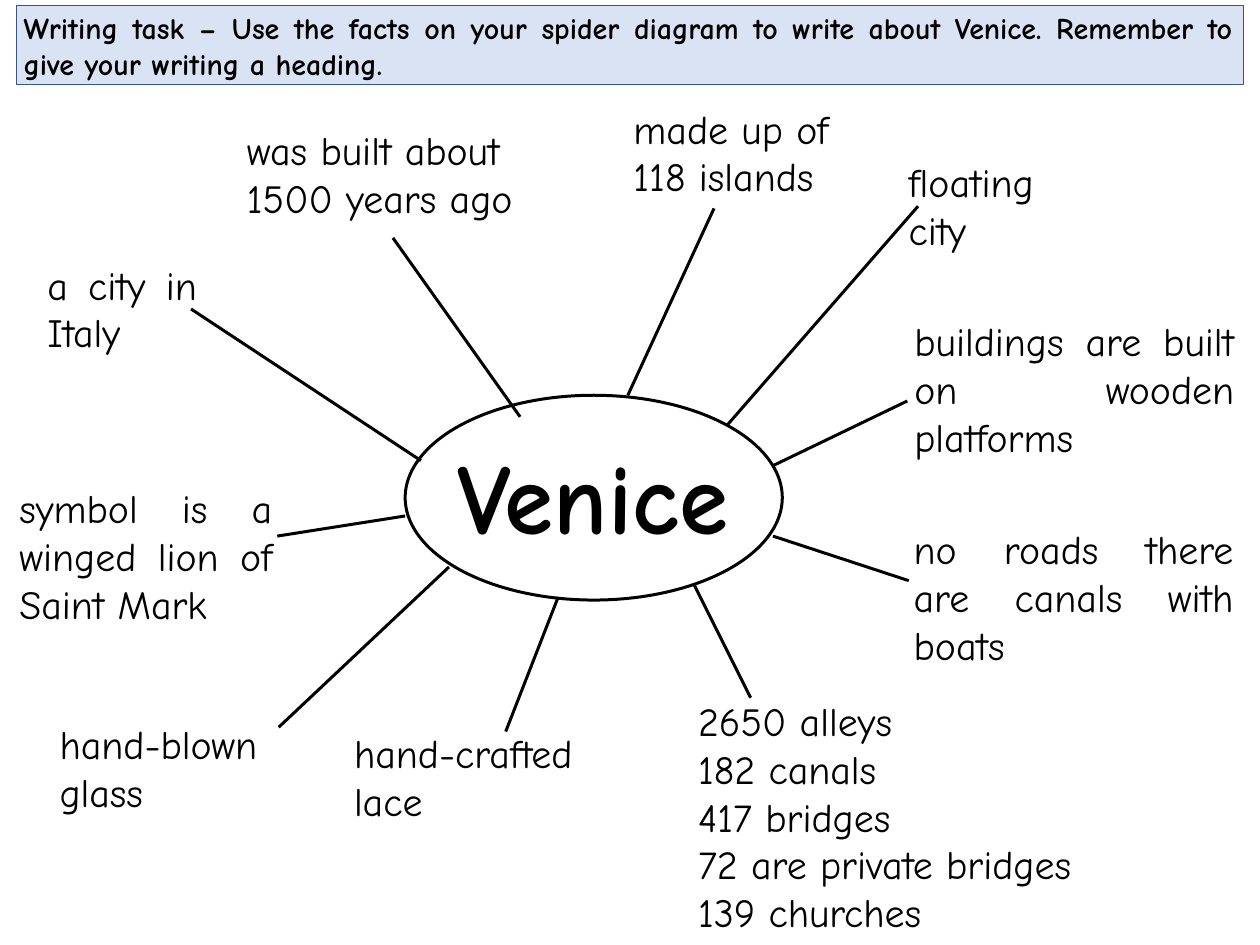
import pptx
import pptx.util
import pptx.dml.color
import pptx.enum.shapes
import pptx.enum.text
from lxml import etree

Inches = pptx.util.Inches
Align = pptx.enum.text.PP_ALIGN
Shapes = pptx.enum.shapes.MSO_SHAPE

FONT = "Comic Neue"
BLACK, WHITE = "000000", "FFFFFF"
BANNER_FILL, BANNER_LINE = "DAE3F3", "325491"

TOPIC = "Venice"
TASK = ("Writing task – Use the facts on your spider diagram to write about Venice. "
        "Remember to give your writing a heading.")

# lines of text, (left, top, width, height), alignment
FACTS = [
    (["a city in Italy"], (0.56, 3.57, 2.28, 1.45), Align.JUSTIFY),
    (["was built about 1500 years ago"], (3.34, 1.7, 4.24, 1.45), Align.LEFT),
    (["made up of 118 islands"], (8.72, 1.4, 3.68, 1.45), Align.LEFT),
    (["floating city"], (12.55, 2.15, 2.56, 1.45), Align.JUSTIFY),
    (["buildings are built on wooden platforms"], (12.63, 4.36, 4.65, 2.12), Align.JUSTIFY),
    (["no roads there are canals with boats"], (12.62, 7.25, 4.65, 2.12), Align.JUSTIFY),
    (["2650 alleys", "182 canals", "417 bridges", "72 are private bridges", "139 churches"],
     (9.62, 9.64, 6.39, 3.45), Align.JUSTIFY),
    (["hand-crafted lace"], (4.83, 10.09, 4.21, 1.45), Align.LEFT),
    (["hand-blown glass"], (0.73, 9.97, 3.49, 1.45), Align.LEFT),
    (["symbol is a winged lion of Saint Mark"], (0.17, 6.68, 3.72, 2.12), Align.JUSTIFY),
]

# each leg runs from the ellipse to its fact
LEGS = [
    ((5.86, 6.41), (2.66, 4.3)),
    ((7.24, 5.8), (5.47, 3.31)),
    ((8.74, 5.5), (9.94, 2.9)),
    ((10.12, 5.92), (12.78, 2.87)),
    ((10.76, 6.48), (12.63, 5.58)),
    ((10.76, 7.46), (12.65, 8.08)),
    ((9.66, 8.13), (10.45, 9.71)),
    ((7.77, 8.31), (7.04, 10.18)),
    ((6.25, 7.89), (3.88, 10.12)),
    ((5.64, 7.18), (3.86, 7.46)),
]


def color(hex_string):
    return pptx.dml.color.RGBColor.from_string(hex_string)


def add_panel(slide, preset, box, fill, line, line_width):
    shape = slide.shapes.add_shape(preset, *map(Inches, box))
    shape.shadow.inherit = False
    shape.fill.solid()
    shape.fill.fore_color.rgb = color(fill)
    shape.line.color.rgb = color(line)
    shape.line.width = pptx.util.Pt(line_width)


def add_text(slide, lines, box, size, alignment, bold=False):
    frame = slide.shapes.add_textbox(*map(Inches, box)).text_frame
    frame.word_wrap = True
    for index, line in enumerate(lines):
        paragraph = frame.add_paragraph() if index else frame.paragraphs[0]
        paragraph.alignment = alignment
        run = paragraph.add_run()
        run.text = line
        run.font.name = FONT
        run.font.size = pptx.util.Pt(size)
        run.font.bold = bold
        run.font.color.rgb = color(BLACK)


def add_leg(slide, start, end):
    connector = slide.shapes.add_connector(
        pptx.enum.shapes.MSO_CONNECTOR.STRAIGHT, *map(Inches, start + end))
    connector.line.color.rgb = color(BLACK)
    connector.line.width = pptx.util.Pt(3)
    etree.SubElement(connector.element.spPr, pptx.oxml.ns.qn("a:effectLst"))


def main():
    presentation = pptx.Presentation()
    presentation.slide_width = Inches(17.54)
    presentation.slide_height = Inches(13.15)
    slide = presentation.slides.add_slide(presentation.slide_layouts[6])

    add_panel(slide, Shapes.OVAL, (5.64, 5.5, 5.25, 2.85), WHITE, BLACK, 3)
    add_text(slide, [TOPIC], (5.92, 6, 4.66, 1.78), 100, Align.CENTER, bold=True)
    for start, end in LEGS:
        add_leg(slide, start, end)
    for lines, box, alignment in FACTS:
        add_text(slide, lines, box, 40, alignment)

    add_panel(slide, Shapes.RECTANGLE, (0.23, 0.08, 17.08, 1.1), BANNER_FILL, BANNER_LINE, 1)
    add_text(slide, [TASK], (0.23, 0.09, 17.04, 1.11), 30, Align.JUSTIFY, bold=True)

    presentation.save("out.pptx")


if __name__ == "__main__":
    main()
